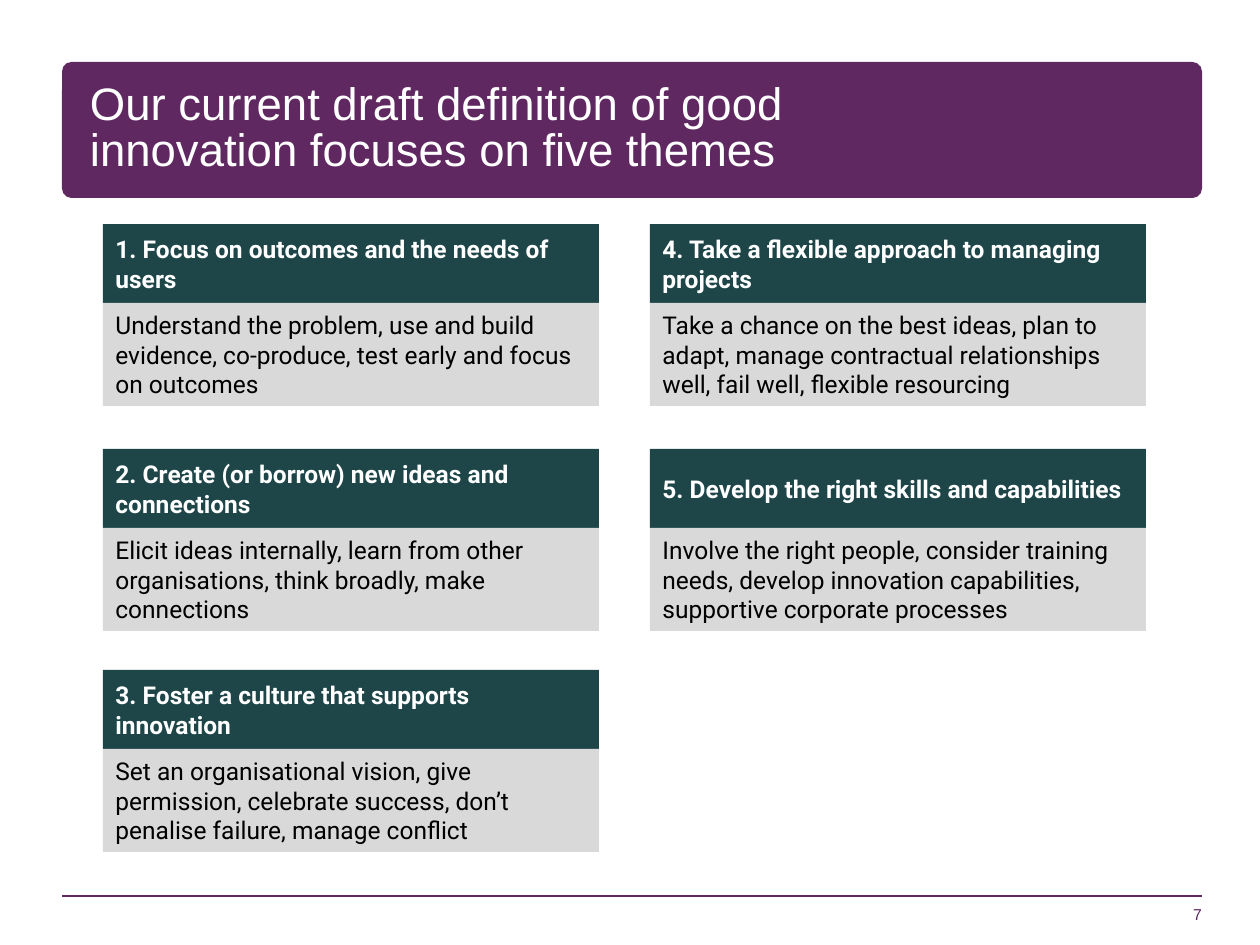
from dataclasses import dataclass

from lxml import etree
from pptx import Presentation
from pptx.dml.color import RGBColor
from pptx.enum.shapes import MSO_CONNECTOR, MSO_SHAPE
from pptx.enum.text import MSO_ANCHOR, MSO_AUTO_SIZE, PP_ALIGN
from pptx.oxml.ns import qn
from pptx.shapes.autoshape import Shape
from pptx.slide import Slide
from pptx.text.text import TextFrame
from pptx.util import Emu, Pt

PURPLE = RGBColor(0x5F, 0x28, 0x61)
TEAL = RGBColor(0x1E, 0x46, 0x49)
GREY = RGBColor(0xD9, 0xD9, 0xD9)
WHITE = RGBColor(0xFF, 0xFF, 0xFF)
BLACK = RGBColor(0x00, 0x00, 0x00)

RECTANGLE = MSO_SHAPE.RECTANGLE
ROUNDED_RECTANGLE = MSO_SHAPE.ROUNDED_RECTANGLE
STRAIGHT = MSO_CONNECTOR.STRAIGHT
MIDDLE = MSO_ANCHOR.MIDDLE
BOTTOM = MSO_ANCHOR.BOTTOM
LEFT = PP_ALIGN.LEFT
RIGHT = PP_ALIGN.RIGHT
NO_AUTOFIT = MSO_AUTO_SIZE.NONE

PIXELS_PER_INCH = 126
COLUMN_LEFTS = (103, 650)
ROW_TOPS = (224, 449, 670)
CARD_WIDTH = 496
HEADING_HEIGHT = 79
DETAIL_HEIGHT = 103


@dataclass(frozen=True)
class Box:
    left: int
    top: int
    width: int
    height: int

    def emu(self) -> tuple[Emu, Emu, Emu, Emu]:
        return px(self.left), px(self.top), px(self.width), px(self.height)


@dataclass(frozen=True)
class TextStyle:
    font: str
    size: int
    color: RGBColor
    bold: bool = False
    alignment: PP_ALIGN = LEFT
    anchor: MSO_ANCHOR = MIDDLE


@dataclass(frozen=True)
class Theme:
    heading: str
    detail: str


TITLE_STYLE = TextStyle("Arial", 26, WHITE)
NUMBER_STYLE = TextStyle("Arial", 9, PURPLE, alignment=RIGHT, anchor=BOTTOM)
HEADING_STYLE = TextStyle("Roboto", 14, WHITE, bold=True)
DETAIL_STYLE = TextStyle("Roboto", 14, BLACK)

THEMES = (
    Theme(
        "1. Focus on outcomes and the needs of users",
        "Understand the problem, use and build evidence, co-produce, "
        "test early and focus on outcomes",
    ),
    Theme(
        "2. Create (or borrow) new ideas and connections",
        "Elicit ideas internally, learn from other organisations, "
        "think broadly, make connections",
    ),
    Theme(
        "3. Foster a culture that supports innovation",
        "Set an organisational vision, give permission, celebrate success, "
        "don’t penalise failure, manage conflict",
    ),
    Theme(
        "4. Take a flexible approach to managing projects",
        "Take a chance on the best ideas, plan to adapt, manage contractual "
        "relationships well, fail well, flexible resourcing",
    ),
    Theme(
        "5. Develop the right skills and capabilities",
        "Involve the right people, consider training needs, develop innovation "
        "capabilities, supportive corporate processes",
    ),
)


def px(length: int) -> Emu:
    return Emu(round(length * 914400 / PIXELS_PER_INCH))


def write_text(frame: TextFrame, text: str, style: TextStyle) -> None:
    frame.text = text
    frame.word_wrap = True
    frame.auto_size = NO_AUTOFIT
    frame.vertical_anchor = style.anchor
    paragraph = frame.paragraphs[0]
    paragraph.alignment = style.alignment
    paragraph.font.name = style.font
    paragraph.font.size = Pt(style.size)
    paragraph.font.bold = style.bold
    paragraph.font.color.rgb = style.color


def remove_margins(frame: TextFrame) -> None:
    frame.margin_left = frame.margin_right = 0
    frame.margin_top = frame.margin_bottom = 0


def add_block(slide: Slide, kind: MSO_SHAPE, box: Box, fill: RGBColor) -> Shape:
    shape = slide.shapes.add_shape(kind, *box.emu())
    shape.shadow.inherit = False
    shape.fill.solid()
    shape.fill.fore_color.rgb = fill
    shape.line.fill.background()
    return shape


def add_title(slide: Slide) -> None:
    banner = add_block(slide, ROUNDED_RECTANGLE, Box(62, 62, 1140, 136), PURPLE)
    banner.adjustments[0] = 0.07
    title = slide.shapes.title
    title.left, title.top, title.width, title.height = Box(90, 67, 769, 125).emu()
    write_text(
        title.text_frame,
        "Our current draft definition of good innovation focuses on five themes",
        TITLE_STYLE,
    )
    remove_margins(title.text_frame)
    title.text_frame.paragraphs[0].line_spacing = 0.85
    title.element.addprevious(banner.element)


def add_footer(slide: Slide) -> None:
    rule = slide.shapes.add_connector(STRAIGHT, px(1202), px(896), px(62), px(896))
    rule.line.color.rgb = PURPLE
    rule.line.width = Pt(1)
    etree.SubElement(rule.element.spPr, qn("a:effectLst"))
    number = slide.shapes.add_textbox(*Box(940, 861, 262, 63).emu())
    write_text(number.text_frame, "7", NUMBER_STYLE)
    remove_margins(number.text_frame)


def add_theme(slide: Slide, theme: Theme, left: int, top: int) -> None:
    heading_box = Box(left, top, CARD_WIDTH, HEADING_HEIGHT)
    detail_box = Box(left, top + HEADING_HEIGHT, CARD_WIDTH, DETAIL_HEIGHT)
    heading = add_block(slide, RECTANGLE, heading_box, TEAL)
    write_text(heading.text_frame, theme.heading, HEADING_STYLE)
    detail = add_block(slide, RECTANGLE, detail_box, GREY)
    write_text(detail.text_frame, theme.detail, DETAIL_STYLE)


def main() -> None:
    presentation = Presentation()
    presentation.slide_width = px(1260)
    presentation.slide_height = px(945)
    slide = presentation.slides.add_slide(presentation.slide_layouts[5])
    add_title(slide)
    add_footer(slide)
    for index, theme in enumerate(THEMES):
        column, row = divmod(index, len(ROW_TOPS))
        add_theme(slide, theme, COLUMN_LEFTS[column], ROW_TOPS[row])
    presentation.save("out.pptx")


if __name__ == "__main__":
    main()
